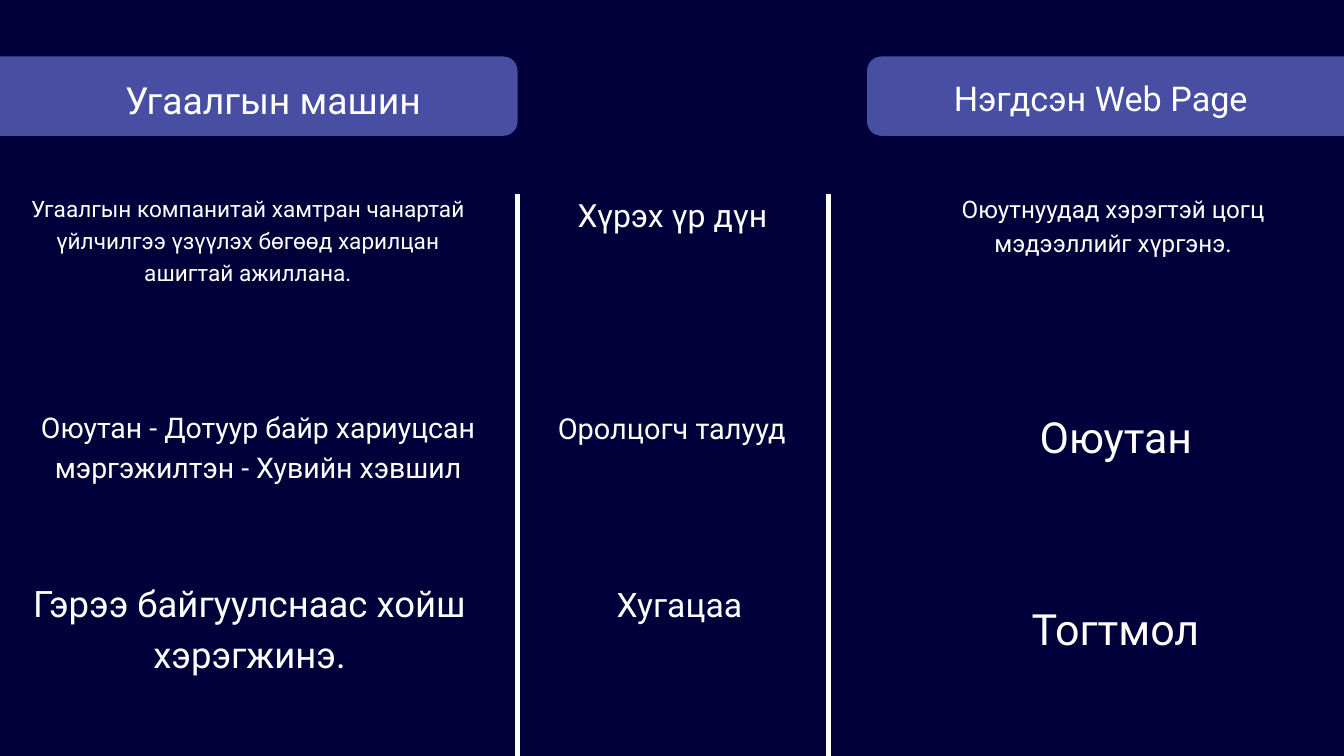
"""Builds a slide that compares two services by result, parties and time."""
from dataclasses import dataclass

from lxml import etree
from pptx import Presentation
from pptx import util as u
from pptx.dml import color
from pptx.enum import shapes, text
from pptx.oxml import ns


@dataclass(frozen=True)
class Theme:
    """Holds the colours, the font and the type sizes."""
    back: str = "01003B"
    band: str = "484FA2"
    ink: str = "FFFFFF"
    font: str = "Roboto"
    lead: float = 1.4
    rule: float = 5.25
    heads: tuple = (40, 36.6)
    left: tuple = (24.2, 30.5, 39.1)
    mid: tuple = (34.2, 31, 36.1)
    right: tuple = (25.9, 45.9, 46.1)


THEME = Theme()
WIDTH, HEIGHT = 1440, 810
BAND_TOP, BAND_WIDE, BAND_HIGH = 60.5, 605.5, 85
RULE_TOP, RULE_END = 207.4, 1017.4

HEADS = (
    (1, "Угаалгын машин", (107, 74.2, 371, 54.7)),
    (3, "Нэгдсэн Web Page", (999.4, 75.6, 360, 49)),
)
LEFT = (
    ("Угаалгын компанитай хамтран чанартай үйлчилгээ үзүүлэх бөгөөд "
     "харилцан ашигтай ажиллана.", (30.2, 204.5, 470.9, 99.4)),
    ("Оюутан - Дотуур байр хариуцсан мэргэжилтэн - Хувийн хэвшил",
     (0, 433.4, 553, 83.5)),
    ("Гэрээ байгуулснаас хойш хэрэгжинэ.", (0, 614.2, 535, 107.3)),
)
MID = (
    ("Хүрэх үр дүн", (608.4, 203, 224, 45.4)),
    ("Оролцогч талууд", (554.4, 433.4, 330.5, 41.8)),
    ("Хугацаа", (608.4, 618.5, 239, 49)),
)
RIGHT = (
    ("Оюутнуудад хэрэгтэй цогц мэдээллийг хүргэнэ.",
     (957.6, 203, 470.2, 71.3)),
    ("Оюутан", (1102.3, 431.3, 186.5, 61.9)),
    ("Тогтмол", (1095.1, 636.5, 200.2, 61.9)),
)


def tint(code):
    """Turns a hex code into a colour."""
    return color.RGBColor.from_string(code)


def write(shape, words, size):
    """Puts one centred paragraph into a shape without margins."""
    frame = shape.text_frame
    frame.word_wrap = True
    frame.auto_size = text.MSO_AUTO_SIZE.NONE
    frame.vertical_anchor = text.MSO_ANCHOR.TOP
    frame.margin_left = frame.margin_right = 0
    frame.margin_top = frame.margin_bottom = 0
    para = frame.paragraphs[0]
    para.alignment = text.PP_ALIGN.CENTER
    para.line_spacing = u.Pt(size * THEME.lead)
    para.space_before = u.Pt(0)
    run = para.add_run()
    run.text = words
    run.font.name = THEME.font
    run.font.size = u.Pt(size)
    run.font.bold = False
    run.font.color.rgb = tint(THEME.ink)


def add_band(slide, left):
    """Draws a rounded band that runs off one side of the slide."""
    band = slide.shapes.add_shape(
        shapes.MSO_SHAPE.ROUNDED_RECTANGLE,
        u.Pt(left), u.Pt(BAND_TOP), u.Pt(BAND_WIDE), u.Pt(BAND_HIGH))
    band.adjustments[0] = 0.18
    band.shadow.inherit = False
    band.fill.solid()
    band.fill.fore_color.rgb = tint(THEME.band)
    band.line.fill.background()


def add_rule(slide, x):
    """Draws an upright line between two columns."""
    rule = slide.shapes.add_connector(
        shapes.MSO_CONNECTOR.STRAIGHT,
        u.Pt(x), u.Pt(RULE_TOP), u.Pt(x), u.Pt(RULE_END))
    rule.line.color.rgb = tint(THEME.ink)
    rule.line.width = u.Pt(THEME.rule)
    etree.SubElement(rule._element.spPr, ns.qn("a:effectLst"))


def set_head(slide, index, words, box, size):
    """Fills a body placeholder as a column head, in front of its band."""
    head = next(p for p in slide.placeholders
                if p.placeholder_format.idx == index)
    head.left, head.top, head.width, head.height = map(u.Pt, box)
    write(head, words, size)
    slide.shapes._spTree.append(head._element)


def add_cells(slide, cells, sizes):
    """Adds the text boxes of one column."""
    for (words, box), size in zip(cells, sizes):
        write(slide.shapes.add_textbox(*map(u.Pt, box)), words, size)


def drop_spare(slide):
    """Removes the placeholders that stayed empty."""
    for spare in list(slide.placeholders):
        if not spare.text_frame.text:
            slide.shapes._spTree.remove(spare._element)


def main():
    """Builds and saves the slide."""
    deck = Presentation()
    deck.slide_width, deck.slide_height = u.Pt(WIDTH), u.Pt(HEIGHT)
    slide = deck.slides.add_slide(deck.slide_layouts.get_by_name("Comparison"))
    slide.background.fill.solid()
    slide.background.fill.fore_color.rgb = tint(THEME.back)
    for left in (-51, 929):
        add_band(slide, left)
    for x in (554.4, 888):
        add_rule(slide, x)
    for (index, words, box), size in zip(HEADS, THEME.heads):
        set_head(slide, index, words, box, size)
    add_cells(slide, LEFT, THEME.left)
    add_cells(slide, MID, THEME.mid)
    add_cells(slide, RIGHT, THEME.right)
    drop_spare(slide)
    deck.save("out.pptx")


if __name__ == "__main__":
    main()
